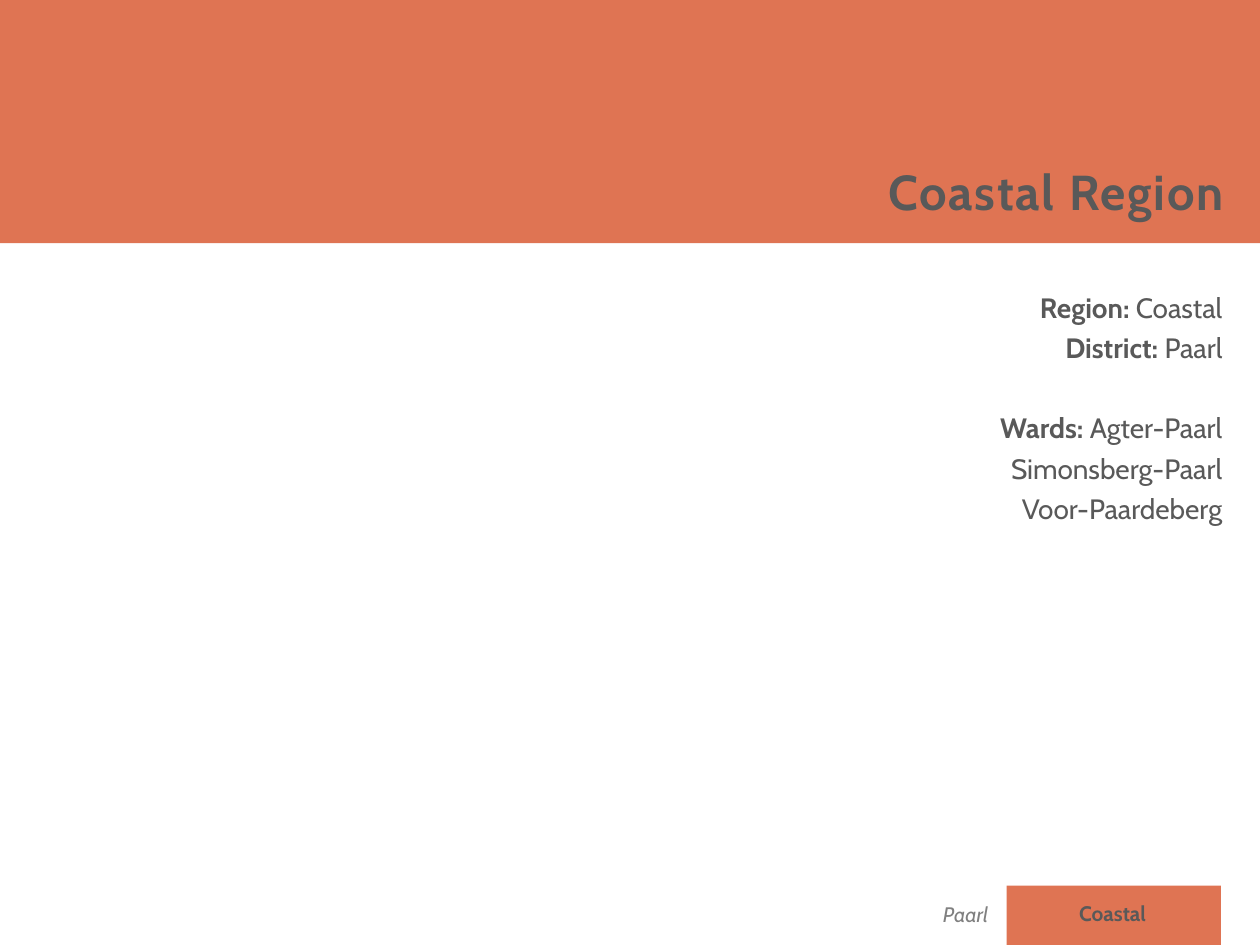
import pptx
import pptx.dml.color
import pptx.enum.shapes
import pptx.enum.text
import pptx.util

RGB = pptx.dml.color.RGBColor
ORANGE = RGB(0xDF, 0x74, 0x53)
DARK = RGB(0x59, 0x59, 0x59)
GREY = RGB(0x80, 0x80, 0x80)
ALIGN = pptx.enum.text.PP_ALIGN
FONT = "Cabin"
WIDE, HIGH = 10, 7.5

# Label, value and space before, in points
FACTS = [
    ("Region: ", "Coastal", 0),
    ("District: ", "Paarl", 0),
    ("Wards: ", "Agter-Paarl", 23),
    ("", "Simonsberg-Paarl", 0),
    ("", "Voor-Paardeberg", 0),
]


def inches(*sizes):
    return [pptx.util.Inches(size) for size in sizes]


def add_block(shapes, *place):
    """Add a plain orange rectangle."""
    kind = pptx.enum.shapes.MSO_SHAPE.RECTANGLE
    block = shapes.add_shape(kind, *inches(*place))
    block.shadow.inherit = False
    block.fill.solid()
    block.fill.fore_color.rgb = ORANGE
    block.line.fill.background()


def add_box(shapes, *place, wrap=True):
    """Add a text box that grows with its text."""
    frame = shapes.add_textbox(*inches(*place)).text_frame
    frame.word_wrap = wrap
    frame.auto_size = pptx.enum.text.MSO_AUTO_SIZE.SHAPE_TO_FIT_TEXT
    return frame


def style(para, size, color=DARK, align=ALIGN.RIGHT, bold=None, italic=None):
    para.alignment = align
    font = para.font
    font.name, font.size = FONT, pptx.util.Pt(size)
    font.bold, font.italic = bold, italic
    font.color.rgb = color


def add_line(shapes, text, size, *place, wrap=True, **look):
    """Add a text box with one line and return its run."""
    para = add_box(shapes, *place, wrap=wrap).paragraphs[0]
    style(para, size, **look)
    run = para.add_run()
    run.text = text
    return run


def add_facts(shapes, *place):
    """Add the list of bold labels and plain values."""
    frame = add_box(shapes, *place)
    for row, (label, value, gap) in enumerate(FACTS):
        para = frame.add_paragraph() if row else frame.paragraphs[0]
        para.line_spacing = 1.2
        if gap:
            para.space_before = pptx.util.Pt(gap)
        style(para, 16)
        for text, bold in ((label, True), (value, False)):
            if text:
                run = para.add_run()
                run.text, run.font.bold = text, bold


def main():
    deck = pptx.Presentation()
    deck.slide_width, deck.slide_height = inches(WIDE, HIGH)
    shapes = deck.slides.add_slide(deck.slide_layouts[6]).shapes

    # Footer tag with the district beside it
    foot = shapes.add_group_shape().shapes
    add_block(foot, 7.99, HIGH - 0.47, 1.7, 0.47)
    add_line(foot, "Coastal", 12, 8.45, 7.1, 0.76, 0.3,
             wrap=False, align=ALIGN.CENTER, bold=True)
    add_line(foot, "Paarl", 12, 6.28, 7.11, 1.66, 0.3,
             color=GREY, italic=True)

    # Region details
    add_facts(shapes, 6.68, 2.2, 3.12, 2.03)

    # Title band
    add_block(shapes, 0, 0, WIDE, 1.93)
    title = add_line(shapes, "Coastal Region", 28, 6.89, 1.23, 2.92, 0.57,
                     wrap=False, bold=True)
    title._r.get_or_add_rPr().set("spc", "100")

    deck.save("out.pptx")


if __name__ == "__main__":
    main()
